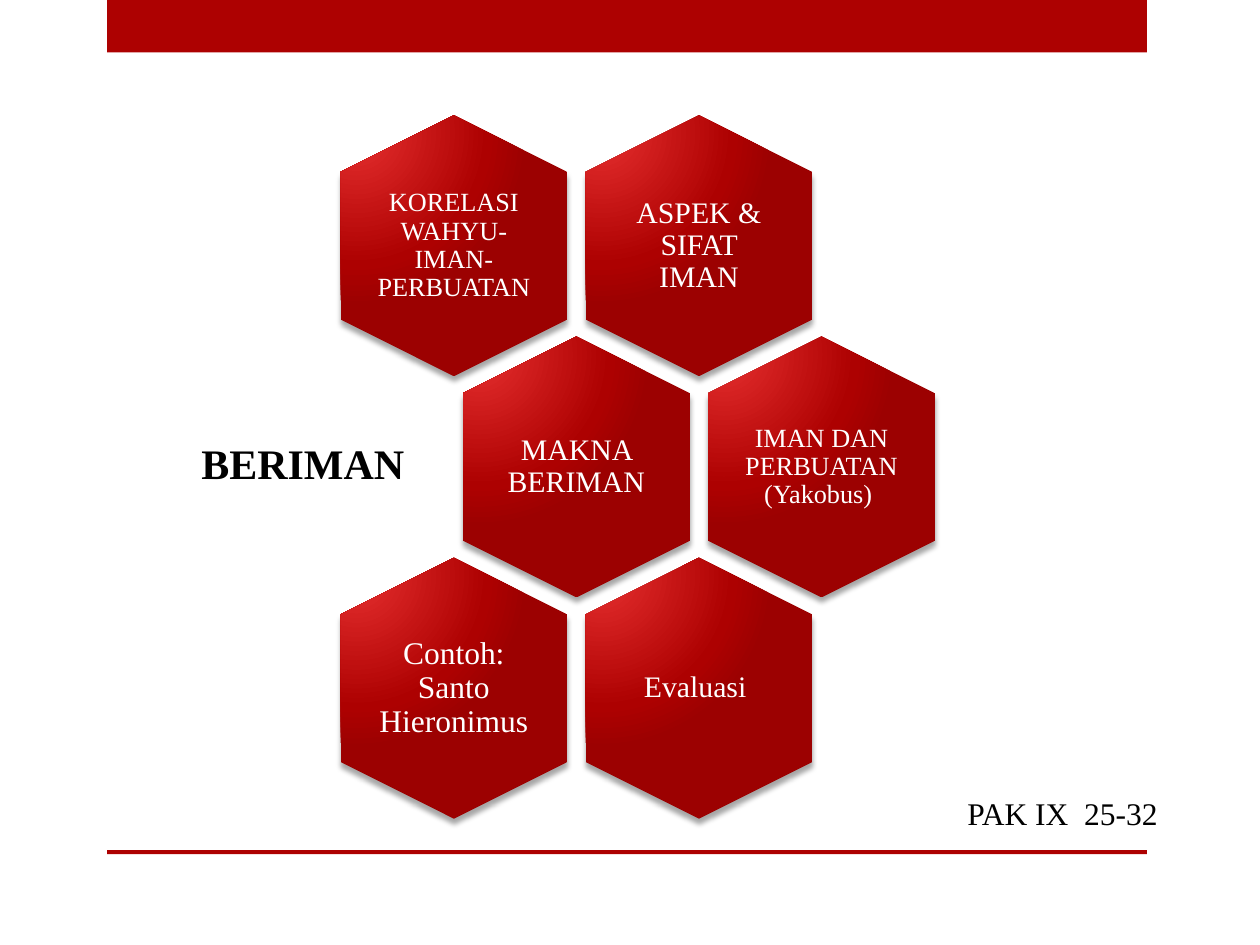
from lxml import etree
from pptx import Presentation
from pptx.dml.color import RGBColor
from pptx.enum.shapes import MSO_SHAPE
from pptx.enum.text import MSO_ANCHOR, PP_ALIGN
from pptx.util import Cm, Pt

RECT, HEXAGON = MSO_SHAPE.RECTANGLE, MSO_SHAPE.HEXAGON
TOP, MIDDLE = MSO_ANCHOR.TOP, MSO_ANCHOR.MIDDLE
LEFT, CENTER, RIGHT = PP_ALIGN.LEFT, PP_ALIGN.CENTER, PP_ALIGN.RIGHT
NS = "http://schemas.openxmlformats.org/drawingml/2006/main"

GRADIENT = f"""<a:gradFill xmlns:a="{NS}" rotWithShape="1"><a:gsLst>
<a:gs pos="0"><a:srgbClr val="E62F2F"/></a:gs>
<a:gs pos="76000"><a:srgbClr val="AD0101"/></a:gs>
<a:gs pos="100000"><a:srgbClr val="9C0101"/></a:gs></a:gsLst>
<a:path path="circle"><a:fillToRect l="15000" t="15000" r="100000" b="100000"/></a:path>
</a:gradFill>"""
SHADOW = f"""<a:effectLst xmlns:a="{NS}">
<a:outerShdw blurRad="38100" dist="38100" dir="5400000" rotWithShape="0">
<a:srgbClr val="000000"><a:alpha val="35000"/></a:srgbClr></a:outerShdw></a:effectLst>"""

HEX_W, HEX_H = 5.26, 4.57
GRID_X, GRID_Y = 6.52, 2.67
HALF_COL, ROW = 2.47, 4.46
LABEL_W, LABEL_H = 3.15, 3.61

HEXAGONS = [
    (2, 0, "ASPEK & SIFAT IMAN", 17, 0.17),
    (0, 0, "KORELASI WAHYU-IMAN-PERBUATAN", 15, 0),
    (1, 1, "MAKNA BERIMAN", 17, 0.17),
    (3, 1, "IMAN DAN PERBUATAN (Yakobus) ", 15, 0),
    (2, 2, "Evaluasi ", 17, 0.17),
    (0, 2, "Contoh: Santo Hieronimus", 18, 0),
]


def rgb(value):
    return RGBColor.from_string(value)


class Deck:
    font = "Times New Roman"
    red, black, white = "AD0101", "000000", "FFFFFF"

    def __init__(self):
        self.prs = Presentation()
        self.prs.slide_width, self.prs.slide_height = Cm(25.4), Cm(19.05)
        self.s = self.prs.slides.add_slide(self.prs.slide_layouts[6])

    def bar(self, x, y, w, h):
        sp = self.s.shapes.add_shape(RECT, Cm(x), Cm(y), Cm(w), Cm(h))
        sp.shadow.inherit = False
        sp.fill.solid()
        sp.fill.fore_color.rgb = rgb(self.red)
        sp.line.fill.background()

    def hexagon(self, x, y):
        sp = self.s.shapes.add_shape(HEXAGON, Cm(x), Cm(y), Cm(HEX_W), Cm(HEX_H))
        sp.adjustments[0] = 0.25
        sp.rotation = 90
        sp._element.spPr.append(etree.fromstring(GRADIENT))
        sp.line.fill.background()
        sp._element.spPr.append(etree.fromstring(SHADOW))

    def text(self, x, y, w, h, text, size, color, align=CENTER, anchor=MIDDLE,
             inset=None, spacing=0.9, bold=False):
        tf = self.s.shapes.add_textbox(Cm(x), Cm(y), Cm(w), Cm(h)).text_frame
        tf.word_wrap = True
        tf.vertical_anchor = anchor
        if inset is not None:
            tf.margin_left = tf.margin_right = Cm(inset)
            tf.margin_top = tf.margin_bottom = Cm(inset)
        tf.text = text
        p = tf.paragraphs[0]
        p.alignment, p.line_spacing = align, spacing
        r = p.runs[0]
        r.font.name, r.font.size, r.font.bold = self.font, Pt(size), bold
        r.font.color.rgb = rgb(color)

    def labelled_hexagon(self, half_col, row, text, size, inset):
        x, y = GRID_X + half_col * HALF_COL, GRID_Y + row * ROW
        self.hexagon(x, y)
        self.text(x + (HEX_W - LABEL_W) / 2, y + (HEX_H - LABEL_H) / 2,
                  LABEL_W, LABEL_H, text, size, self.white, inset=inset)


def main():
    deck = Deck()
    deck.bar(2.16, 0, 20.96, 1.06)
    deck.bar(2.16, 17.14, 20.96, 0.08)
    for item in HEXAGONS:
        deck.labelled_hexagon(*item)
    deck.text(2.74, 7.82, 5.66, 3.15, "BERIMAN", 24, deck.black,
              align=RIGHT, inset=0.25, bold=True)
    deck.text(19.25, 15.88, 4.45, 1.02, "PAK IX  25-32", 18, deck.black,
              align=LEFT, anchor=TOP, spacing=1.0)
    deck.prs.save("out.pptx")


if __name__ == "__main__":
    main()
